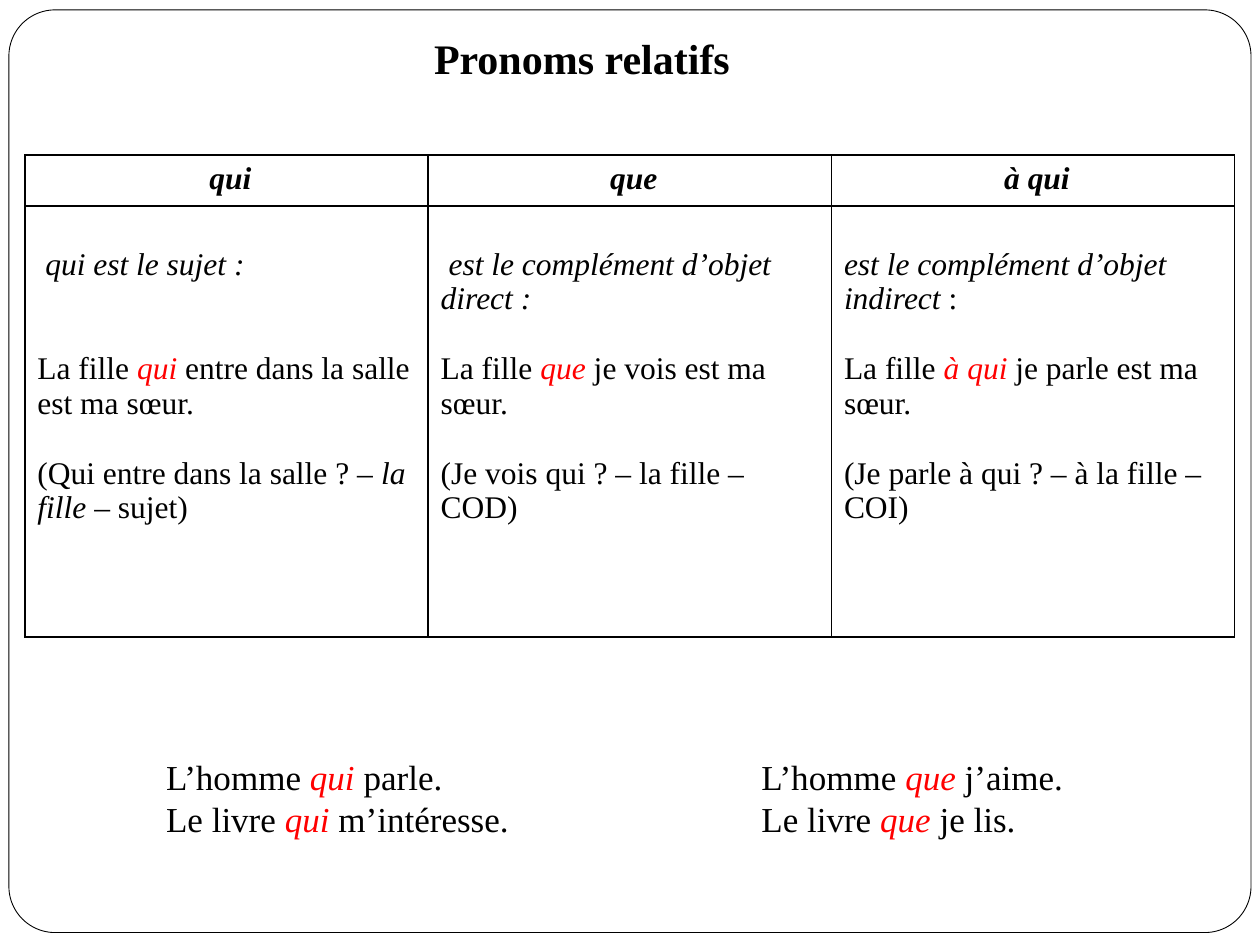
from dataclasses import dataclass

from lxml.etree import SubElement
from pptx import Presentation
from pptx.dml.color import RGBColor
from pptx.enum.shapes import MSO_SHAPE
from pptx.enum.text import PP_ALIGN
from pptx.oxml.ns import qn
from pptx.util import Cm, Pt

BLACK = RGBColor(0, 0, 0)
WHITE = RGBColor(255, 255, 255)
RED = RGBColor(255, 0, 0)
FONT = "Times New Roman"
TABLE_SIZE = 18
TABLE_LEADING = 19.9


@dataclass
class Span:
    text: str
    italic: bool = False
    color: RGBColor = BLACK


def slanted(text):
    return Span(text, italic=True)


def pronoun(text):
    return Span(text, italic=True, color=RED)


HEADINGS = [" qui", " que", " à qui"]

RULES = [
    [
        (0, [Span(" "), slanted("qui est le sujet :")]),
        (2, [Span("La fille "), pronoun("qui"),
             Span(" entre dans la salle est ma sœur.")]),
        (1, [Span("(Qui entre dans la salle ? – "), slanted("la fille "),
             Span("– sujet)")]),
    ],
    [
        (0, [Span(" "), slanted("est le complément d’objet direct :")]),
        (1, [Span("La fille "), pronoun("que"), Span(" je vois est ma sœur.")]),
        (1, [Span("(Je vois qui ? – la fille – COD)")]),
    ],
    [
        (0, [slanted("est le complément d’objet indirect "), Span(":")]),
        (1, [Span("La fille "), pronoun("à qui "),
             Span("je parle est ma sœur.")]),
        (1, [Span("(Je parle à qui ? – à la fille – COI)")]),
    ],
]

SUBJECT_EXAMPLES = [
    [Span("L’homme"), pronoun(" qui "), Span("parle.")],
    [Span("Le livre "), pronoun("qui"), Span(" m’intéresse.")],
]
OBJECT_EXAMPLES = [
    [Span("L’homme "), pronoun("que"), Span(" j’aime.")],
    [Span("Le livre "), pronoun("que"), Span(" je lis.")],
]


class GrammarPage:
    def __init__(self, page):
        self.page = page

    def frame(self, left, top, width, height):
        box = self.page.shapes.add_shape(
            MSO_SHAPE.ROUNDED_RECTANGLE, Cm(left), Cm(top), Cm(width), Cm(height))
        box.adjustments[0] = 0.05
        box.shadow.inherit = False
        box.fill.solid()
        box.fill.fore_color.rgb = WHITE
        box.line.color.rgb = BLACK
        box.line.width = Pt(0.5)

    def paragraph(self, para, spans, size, leading, bold=False):
        para.line_spacing = Pt(leading)
        para.font.name = FONT
        para.font.size = Pt(size)
        para.font.bold = bold
        for span in spans:
            run = para.add_run()
            run.text = span.text
            run.font.italic = span.italic
            run.font.color.rgb = span.color

    def text(self, left, top, width, height, lines, size, bold=False):
        box = self.page.shapes.add_textbox(Cm(left), Cm(top), Cm(width), Cm(height))
        frame = box.text_frame
        frame.word_wrap = True
        for index, spans in enumerate(lines):
            para = frame.add_paragraph() if index else frame.paragraphs[0]
            self.paragraph(para, spans, size, size * 1.2, bold)

    def border(self, cell):
        properties = cell._tc.get_or_add_tcPr()
        for position, side in enumerate(("lnL", "lnR", "lnT", "lnB")):
            line = SubElement(properties, qn(f"a:{side}"), w=str(Pt(1)))
            fill = SubElement(line, qn("a:solidFill"))
            SubElement(fill, qn("a:srgbClr"), val=str(BLACK))
            properties.insert(position, line)

    def table(self, left, top, column_width, row_heights, headings, rules):
        table = self.page.shapes.add_table(
            len(row_heights), len(headings), Cm(left), Cm(top),
            Cm(column_width * len(headings)), Cm(sum(row_heights))).table
        table.first_row = False
        table.horz_banding = False
        for row, height in zip(table.rows, row_heights):
            row.height = Cm(height)
        for index, (heading, paragraphs) in enumerate(zip(headings, rules)):
            table.columns[index].width = Cm(column_width)
            head, body = table.cell(0, index), table.cell(1, index)
            for cell in (head, body):
                cell.fill.background()
                self.border(cell)
            para = head.text_frame.paragraphs[0]
            para.alignment = PP_ALIGN.CENTER
            self.paragraph(para, [slanted(heading)], TABLE_SIZE, TABLE_LEADING, True)
            body.margin_top = Cm(0.83)
            for number, (gap, spans) in enumerate(paragraphs):
                frame = body.text_frame
                para = frame.add_paragraph() if number else frame.paragraphs[0]
                if gap:
                    para.space_before = Pt(gap * TABLE_LEADING)
                self.paragraph(para, spans, TABLE_SIZE, TABLE_LEADING)


def main():
    deck = Presentation()
    deck.slide_width, deck.slide_height = Cm(25.4), Cm(19.05)
    grammar = GrammarPage(deck.slides.add_slide(deck.slide_layouts[6]))
    grammar.frame(0.18, 0.2, 25.04, 18.6)
    grammar.table(0.5, 3.12, 8.13, [1.03, 8.69], HEADINGS, RULES)
    grammar.text(8.5, 0.53, 7.26, 1.27, [[Span("Pronoms relatifs")]], 24, bold=True)
    grammar.text(3.1, 15.11, 8, 1.96, SUBJECT_EXAMPLES, 20)
    grammar.text(15.1, 15.11, 7.04, 1.96, OBJECT_EXAMPLES, 20)
    deck.save("out.pptx")


if __name__ == "__main__":
    main()
